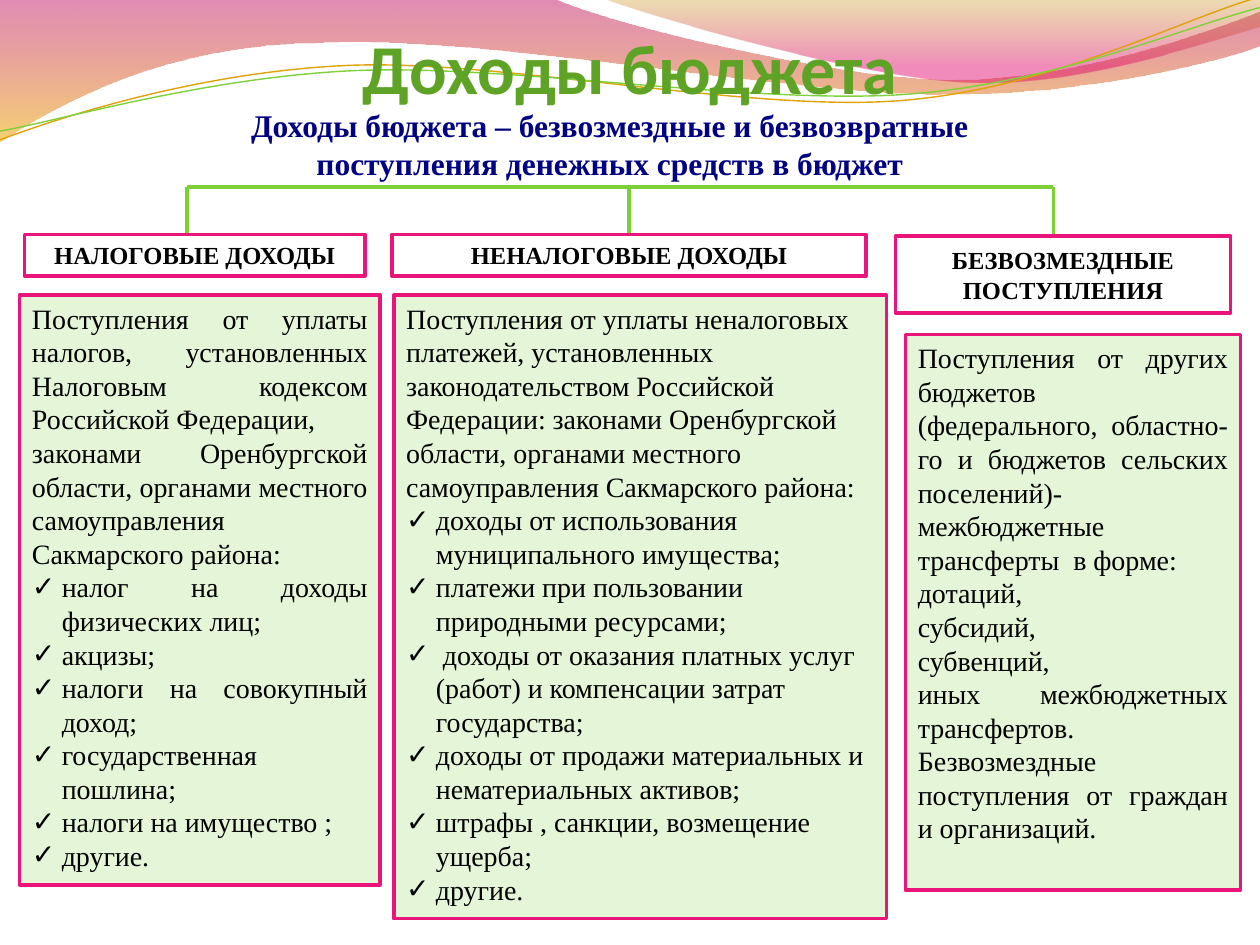
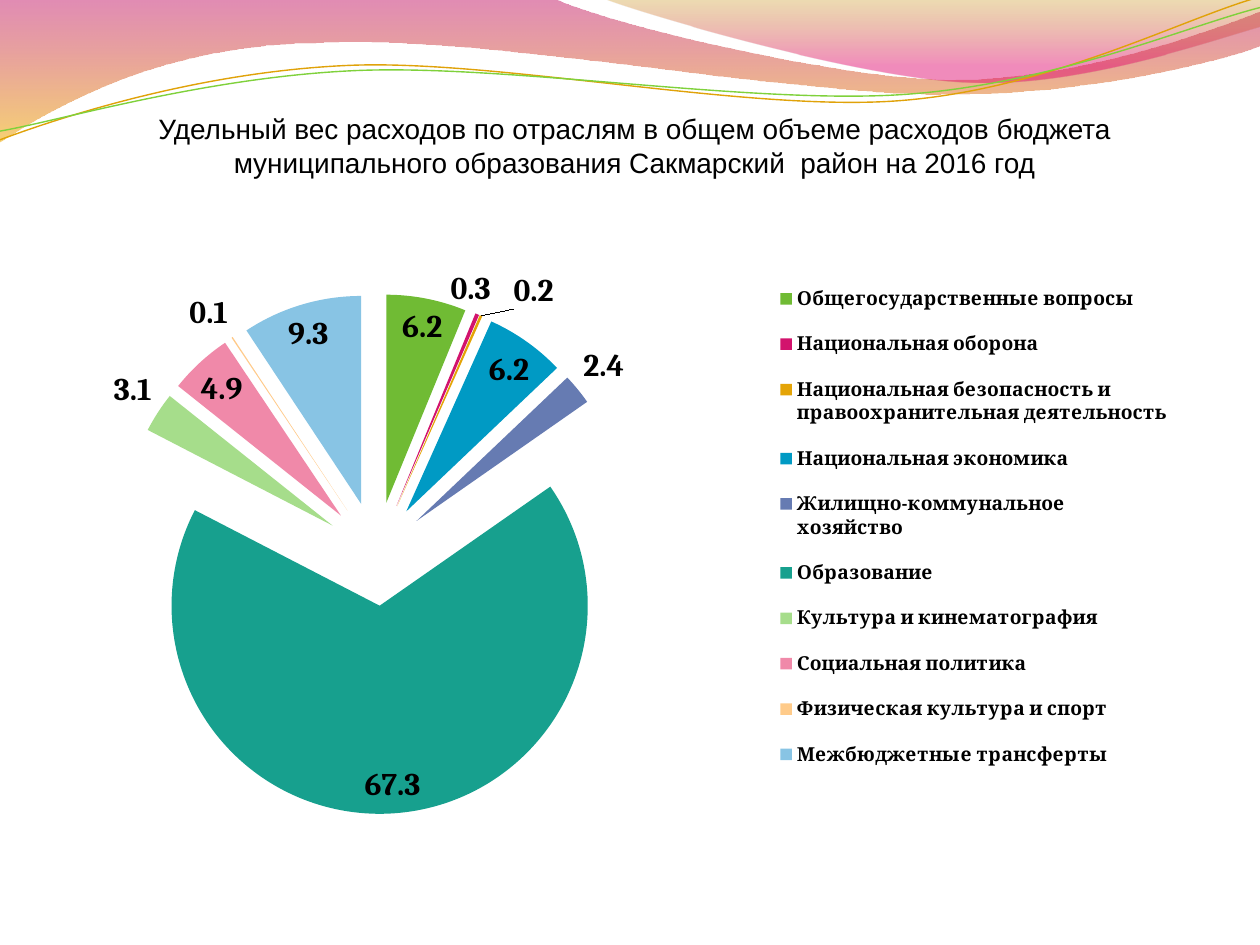
"""Build two slides on the revenues and expenses of a district budget."""
from dataclasses import dataclass

from lxml import etree
from pptx import Presentation
from pptx.chart.data import CategoryChartData
from pptx.dml.color import RGBColor
from pptx.enum.chart import XL_CHART_TYPE, XL_LABEL_POSITION, XL_LEGEND_POSITION
from pptx.enum.shapes import MSO_CONNECTOR, MSO_SHAPE
from pptx.enum.text import MSO_ANCHOR, MSO_AUTO_SIZE, PP_ALIGN
from pptx.oxml.ns import qn
from pptx.util import Pt

LEFT, CENTER, JUSTIFY = PP_ALIGN.LEFT, PP_ALIGN.CENTER, PP_ALIGN.JUSTIFY
TOP, MIDDLE = MSO_ANCHOR.TOP, MSO_ANCHOR.MIDDLE
NO_AUTOFIT = MSO_AUTO_SIZE.NONE
RECTANGLE, STRAIGHT = MSO_SHAPE.RECTANGLE, MSO_CONNECTOR.STRAIGHT
PIE, BEST_FIT = XL_CHART_TYPE.PIE, XL_LABEL_POSITION.BEST_FIT
LEGEND_RIGHT = XL_LEGEND_POSITION.RIGHT
TITLE_ONLY = 5
TOP_SIDE = 0


@dataclass(frozen=True)
class Theme:
    title_font: str = "Calibri"
    text_font: str = "Times New Roman"
    heading_font: str = "Arial"
    chart_font: str = "Cambria"
    title_size: int = 40
    definition_size: int = 18
    body_size: int = 16
    header_size: int = 14
    label_size: int = 18
    legend_size: int = 11
    title: str = "5FA326"
    definition: str = "000082"
    text: str = "000000"
    header_fill: str = "FFFFFF"
    body_fill: str = "E5F6D8"
    border: str = "EA157A"
    branch: str = "7CD036"
    gold_line: str = "E0A209"
    green_line: str = "7FD13B"
    line_width: float = 2
    left_wave: tuple = ((0, "BD0059", 45), (1, "F0AB00", 55))
    right_wave: tuple = ((0, "C38B00", 30), (0.8, "E1006B", 45))
    slices: tuple = ("70BB34", "D2136D", "E4A407", "009AC4", "667BB2",
                     "17A08E", "A6DD8B", "F089A9", "FFCB8A", "88C4E4")


THEME = Theme()

LEFT_WAVE = [
    (0, -0.7), (316.8, -0.7),
    (342.7, 12.2, 478.1, 45.4, 545.8, 45.4), (614.2, 45.4, 689.8, 18.7, 720, 6.5),
    (720.7, 25.9),
    (707.8, 31.7, 626.4, 54.7, 537.1, 54), (447.8, 54, 275, 20.2, 185, 24.5),
    (92.9, 25.2, 33.1, 59.8, -0.7, 81.4)]
RIGHT_WAVE = [
    (344.9, -0.7),
    (366.5, 7.9, 491, 44.6, 553.7, 46.8), (616.3, 49.7, 691.9, 23, 720, 15.1),
    (720, 0)]
GOLD_LINE = [
    (0, 79.9),
    (34.6, 67, 113.8, 41, 199.4, 37.4), (284.4, 33.8, 427, 64.1, 513.4, 57.6),
    (599.8, 51.1, 675.4, 10.8, 718.6, -1.4)]
GREEN_LINE = [
    (0, 74.9),
    (33.8, 69.1, 118.1, 43.9, 203.8, 40.3), (290.2, 36.7, 429.8, 59.8, 516.2, 54),
    (601.9, 48.2, 677.5, 15.1, 720, 4.3)]

TAX_LINES = [
    "Поступления от уплаты налогов, установленных Налоговым кодексом Российской Федерации,",
    "законами Оренбургской области, органами местного самоуправления Сакмарского района:",
    "налог на доходы физических лиц;",
    "акцизы;",
    "налоги на совокупный доход;",
    "государственная пошлина;",
    "налоги на имущество ;",
    "другие."]
NON_TAX_LINES = [
    "Поступления от уплаты неналоговых платежей, установленных законодательством "
    "Российской Федерации: законами Оренбургской области, органами местного "
    "самоуправления Сакмарского района:",
    "доходы от использования муниципального имущества;",
    "платежи при пользовании природными ресурсами;",
    " доходы от оказания платных услуг (работ) и компенсации затрат государства;",
    "доходы от продажи материальных и нематериальных активов;",
    "штрафы , санкции, возмещение ущерба;",
    "другие."]
GRANT_LINES = [
    "Поступления от других бюджетов",
    "(федерального, областно-го и бюджетов сельских поселений)-межбюджетные "
    "трансферты  в форме:",
    "дотаций,",
    "субсидий,",
    "субвенций,",
    "иных межбюджетных трансфертов.",
    "Безвозмездные поступления от граждан и организаций."]

EXPENSES = {
    "Общегосударственные вопросы": 6.2,
    "Национальная оборона": 0.3,
    "Национальная безопасность и правоохранительная деятельность": 0.2,
    "Национальная экономика": 6.2,
    "Жилищно-коммунальное хозяйство": 2.4,
    "Образование": 67.3,
    "Культура и кинематография": 3.1,
    "Социальная политика": 4.9,
    "Физическая культура и спорт": 0.1,
    "Межбюджетные трансферты": 9.3}


def color(value):
    return RGBColor.from_string(value)


def points(*lengths):
    return [Pt(length) for length in lengths]


def set_font(font, name, size, bold, value):
    font.name, font.size, font.bold = name, Pt(size), bold
    font.color.rgb = color(value)


def write(frame, lines, font=THEME.text_font, size=THEME.body_size, bold=False,
          value=THEME.text, align=LEFT, anchor=TOP, insets=(7.2, 3.6, 7.2, 3.6),
          checked_from=None):
    frame.word_wrap = True
    frame.auto_size = NO_AUTOFIT
    frame.vertical_anchor = anchor
    (frame.margin_left, frame.margin_top,
     frame.margin_right, frame.margin_bottom) = points(*insets)
    for index, line in enumerate(lines):
        paragraph = frame.add_paragraph() if index else frame.paragraphs[0]
        paragraph.alignment = align
        if checked_from is not None and index >= checked_from:
            properties = paragraph._p.get_or_add_pPr()
            properties.set("marL", str(Pt(17)))
            properties.set("indent", str(-Pt(17)))
            etree.SubElement(properties, qn("a:buFont")).set("typeface", THEME.heading_font)
            etree.SubElement(properties, qn("a:buChar")).set("char", "✓")
        run = paragraph.add_run()
        run.text = line
        set_font(run.font, font, size, bold, value)


def bend(shape, outline):
    edges = list(shape.element.iter(qn("a:lnTo")))
    for edge, segment in zip(edges, outline[1:]):
        if len(segment) == 2:
            continue
        curve = etree.Element(qn("a:cubicBezTo"))
        for x, y in zip(segment[::2], segment[1::2]):
            point = etree.SubElement(curve, qn("a:pt"))
            point.set("x", str(Pt(x) - shape.left))
            point.set("y", str(Pt(y) - shape.top))
        edge.getparent().replace(edge, curve)


def place(parent, index, chart_box, area):
    previous = parent.find(qn("c:layout"))
    if previous is not None:
        parent.remove(previous)
    layout = etree.Element(qn("c:layout"))
    manual = etree.SubElement(layout, qn("c:manualLayout"))
    if parent.tag == qn("c:plotArea"):
        etree.SubElement(manual, qn("c:layoutTarget")).set("val", "inner")
    for name in ("xMode", "yMode"):
        etree.SubElement(manual, qn(f"c:{name}")).set("val", "edge")
    for name, length, whole in zip("xywh", area, chart_box[2:] * 2):
        etree.SubElement(manual, qn(f"c:{name}")).set("val", str(length / whole))
    parent.insert(index, layout)


class Deck:
    def __init__(self, theme):
        self.theme = theme
        self.presentation = Presentation()
        self.presentation.slide_width, self.presentation.slide_height = points(720, 540)
        self.slide = None
        self.wave_count = 0

    def new_slide(self):
        layout = self.presentation.slide_layouts[TITLE_ONLY]
        self.slide = self.presentation.slides.add_slide(layout)

    def wave(self, outline, stops=None, line=None):
        start, *vertices = [points(*segment[-2:]) for segment in outline]
        builder = self.slide.shapes.build_freeform(*start, scale=1.0)
        builder.add_line_segments(vertices, close=stops is not None)
        shape = builder.convert_to_shape()
        bend(shape, outline)
        shape.shadow.inherit = False
        if stops:
            shape.line.fill.background()
            shape.fill.gradient()
            shape.fill.gradient_angle = 270
            for stop, (position, value, opacity) in zip(shape.fill.gradient_stops, stops):
                stop.position, stop.color.rgb = position, color(value)
            for element, stop in zip(shape.element.iter(qn("a:gs")), stops):
                alpha = etree.SubElement(element[0], qn("a:alpha"))
                alpha.set("val", str(stop[2] * 1000))
        else:
            shape.fill.background()
            shape.line.color.rgb = color(line)
            shape.line.width = Pt(0.8)
        self.move_to_master(shape)

    def move_to_master(self, shape):
        next(shape.element.iter(qn("p:cNvPr"))).set("id", str(100 + self.wave_count))
        self.presentation.slide_master.shapes.element.insert(
            2 + self.wave_count, shape.element)
        self.wave_count += 1

    def title(self, text, box, **text_format):
        shape = self.slide.shapes.title
        shape.left, shape.top, shape.width, shape.height = points(*box)
        write(shape.text_frame, [text], align=CENTER, **text_format)

    def text(self, text, box, **text_format):
        shape = self.slide.shapes.add_textbox(*points(*box))
        write(shape.text_frame, [text], **text_format)

    def panel(self, lines, box, fill, **text_format):
        shape = self.slide.shapes.add_shape(RECTANGLE, *points(*box))
        shape.shadow.inherit = False
        shape.fill.solid()
        shape.fill.fore_color.rgb = color(fill)
        shape.line.color.rgb = color(self.theme.border)
        shape.line.width = Pt(self.theme.line_width)
        write(shape.text_frame, lines, **text_format)
        return shape

    def branch(self, start, end):
        connector = self.slide.shapes.add_connector(STRAIGHT, *points(*start, *end))
        connector.line.color.rgb = color(self.theme.branch)
        connector.line.width = Pt(self.theme.line_width)
        etree.SubElement(connector.element.spPr, qn("a:effectLst"))
        return connector

    def pie(self, values, box, plot_area, legend_area):
        theme = self.theme
        data = CategoryChartData()
        data.categories = list(values)
        data.add_series("Series 1", list(values.values()))
        chart = self.slide.shapes.add_chart(PIE, *points(*box), data).chart
        chart.has_title = False
        set_font(chart.font, theme.chart_font, theme.label_size, False, theme.text)
        chart.has_legend = True
        chart.legend.position = LEGEND_RIGHT
        chart.legend.include_in_layout = False
        set_font(chart.legend.font, theme.chart_font, theme.legend_size, True, theme.text)
        plot = chart.plots[0]
        plot.vary_by_categories = True
        plot.has_data_labels = True
        labels = plot.data_labels
        labels.show_value = True
        labels.position = BEST_FIT
        set_font(labels.font, theme.chart_font, theme.label_size, True, theme.text)
        explosion = etree.Element(qn("c:explosion"))
        explosion.set("val", "25")
        next(chart.element.iter(qn("c:ser"))).find(qn("c:tx")).addnext(explosion)
        for index, value in enumerate(theme.slices):
            fill = plot.series[0].points[index].format.fill
            fill.solid()
            fill.fore_color.rgb = color(value)
        place(next(chart.element.iter(qn("c:plotArea"))), 0, box, plot_area)
        place(next(chart.element.iter(qn("c:legend"))), 1, box, legend_area)


def build_revenues(deck):
    theme = deck.theme
    deck.title("Доходы бюджета", (36, 15, 648, 50), font=theme.title_font,
               size=theme.title_size, bold=True, value=theme.title, anchor=MIDDLE,
               insets=(7.2, 0, 7.2, 3.6))
    deck.text("Доходы бюджета – безвозмездные и безвозвратные поступления "
              "денежных средств в бюджет", (133, 57.2, 431, 51), align=CENTER,
              size=theme.definition_size, bold=True, value=theme.definition)
    columns = [
        ("НАЛОГОВЫЕ ДОХОДЫ", (14.1, 133.9, 194.4, 23.8), 106.8,
         TAX_LINES, (11.2, 168.6, 206, 337), JUSTIFY, 2),
        ("НЕНАЛОГОВЫЕ ДОХОДЫ", (224, 133.9, 271, 23.8), 359.5,
         NON_TAX_LINES, (225, 168.6, 281.5, 356.4), LEFT, 1),
        ("БЕЗВОЗМЕЗДНЫЕ ПОСТУПЛЕНИЯ", (511.7, 134.9, 191.5, 44), 602,
         GRANT_LINES, (517.4, 191.2, 191.5, 317.5), JUSTIFY, None)]
    rail = 106.8
    deck.branch((columns[0][2], rail), (columns[-1][2], rail))
    for header, header_box, drop, lines, body_box, align, checked_from in columns:
        left, top, width, height = header_box
        connector = deck.branch((drop, rail), (drop, top))
        shape = deck.panel([header], header_box, theme.header_fill, align=CENTER,
                           anchor=MIDDLE, size=theme.header_size, bold=True)
        if drop == left + width / 2:
            connector.end_connect(shape, TOP_SIDE)
        deck.panel(lines, body_box, theme.body_fill, align=align,
                   checked_from=checked_from)


def build_expenses(deck):
    deck.title("Удельный вес расходов по отраслям в общем объеме расходов бюджета "
               "муниципального образования Сакмарский  район на 2016 год",
               (31.2, 60.2, 663, 46), font=deck.theme.heading_font)
    deck.pie(EXPENSES, (22.3, 134.6, 652.3, 339.8),
             plot_area=(25.4, 33.3, 334.6, 297.3), legend_area=(422.5, 17, 223.4, 299))


def main():
    deck = Deck(THEME)
    deck.new_slide()
    deck.wave(LEFT_WAVE, stops=THEME.left_wave)
    deck.wave(RIGHT_WAVE, stops=THEME.right_wave)
    deck.wave(GOLD_LINE, line=THEME.gold_line)
    deck.wave(GREEN_LINE, line=THEME.green_line)
    build_revenues(deck)
    deck.new_slide()
    build_expenses(deck)
    deck.presentation.save("out.pptx")


if __name__ == "__main__":
    main()
